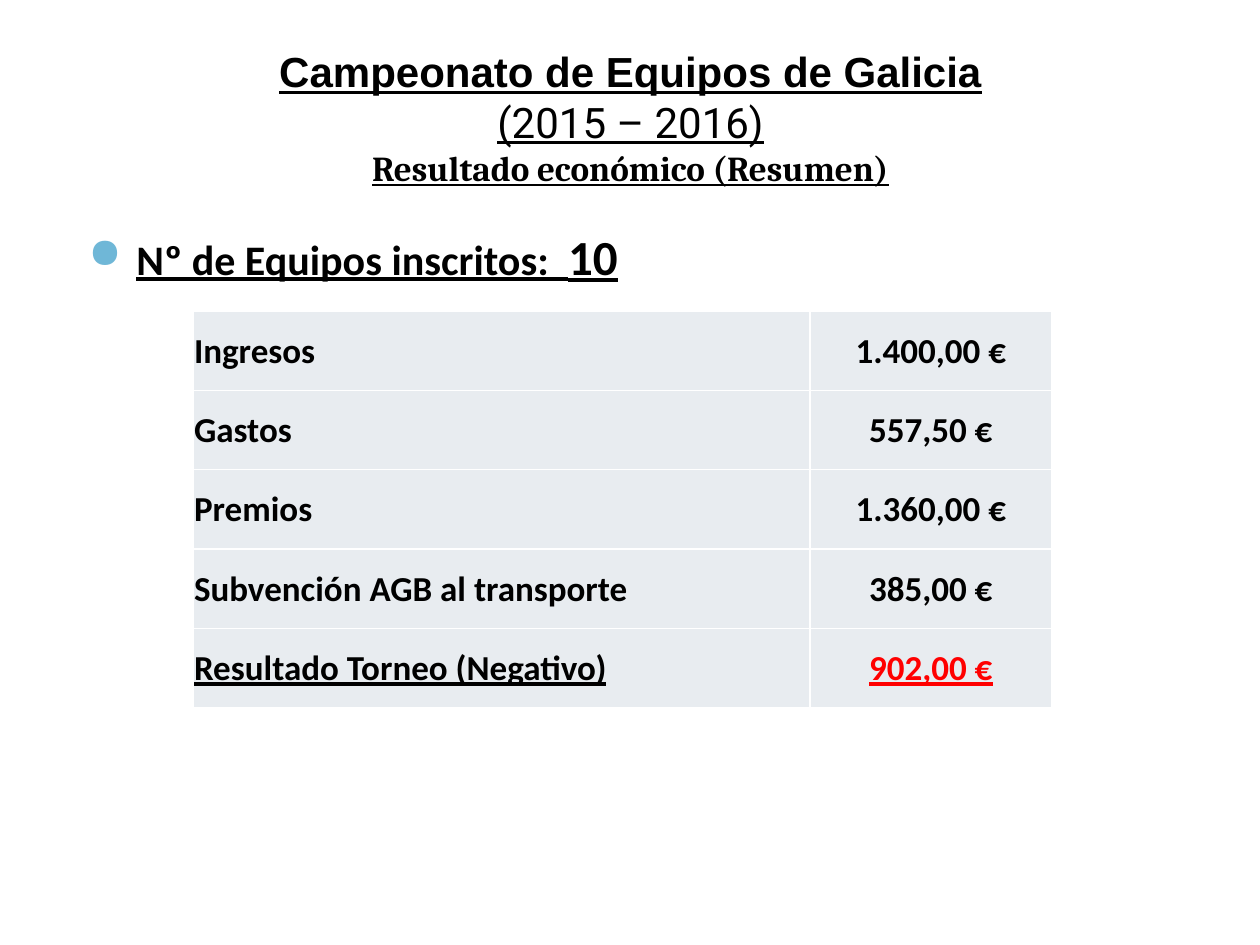
import copy
import dataclasses

import pptx
import pptx.dml.color
import pptx.enum.text
import pptx.oxml
import pptx.oxml.ns
import pptx.util

SCALE = 914400 / 126
ALIGN = pptx.enum.text.PP_ALIGN
ANCHOR = pptx.enum.text.MSO_ANCHOR


@dataclasses.dataclass
class Span:
    text: str
    size: int
    face: str = "Calibri"
    bold: bool = True
    line: bool = True
    tint: str = "000000"


@dataclasses.dataclass
class Entry:
    label: str
    value: str
    line: bool = False
    tint: str = "000000"


TITLE = [
    Span("Campeonato de Equipos de Galicia", 24, "Arial"),
    Span("(2015 – 2016)", 24, "Roboto", bold=False),
    Span("Resultado económico (Resumen)", 20, "Cambria"),
]
TEAMS = [Span("Nº de Equipos inscritos:  ", 24), Span("10", 28)]
ROWS = [
    Entry("Ingresos", "1.400,00 €"),
    Entry("Gastos", "557,50 €"),
    Entry("Premios", "1.360,00 €"),
    Entry("Subvención AGB al transporte", "385,00 €"),
    Entry("Resultado Torneo (Negativo)", "902,00 €", True, "FF0000"),
]


def px(count: int) -> int:
    return pptx.util.Emu(round(count * SCALE))


def color(code: str) -> pptx.dml.color.RGBColor:
    return pptx.dml.color.RGBColor.from_string(code)


def assign(item: object, values: dict) -> None:
    for name, value in values.items():
        setattr(item, name, value)


def place(shape: object, left: int, top: int, width: int, height: int) -> None:
    assign(shape, {"left": px(left), "top": px(top),
                   "width": px(width), "height": px(height)})


def write(para: object, spans: list[Span], split: bool = False) -> None:
    for index, span in enumerate(spans):
        run = para.add_run()
        run.text = span.text
        assign(run.font, {"name": span.face, "size": pptx.util.Pt(span.size),
                          "bold": span.bold, "underline": span.line})
        run.font.color.rgb = color(span.tint)
        if split and index < len(spans) - 1:
            para.add_line_break()
            para._p[-1].insert(0, copy.deepcopy(run._r.rPr))


def bullet(para: object, sign: str, tint: str, indent: int) -> None:
    props = para._p.get_or_add_pPr()
    props.set("marL", str(px(indent)))
    props.set("indent", str(-px(indent)))
    space = pptx.oxml.ns.nsdecls("a")
    for xml in (f'<a:buClr {space}><a:srgbClr val="{tint}"/></a:buClr>',
                f'<a:buChar {space} char="{sign}"/>'):
        props.append(pptx.oxml.parse_xml(xml))


def head(slide: object) -> None:
    title = slide.shapes.title
    place(title, 76, 40, 1109, 155)
    frame = title.text_frame
    assign(frame, {"word_wrap": True, "vertical_anchor": ANCHOR.BOTTOM,
                   "auto_size": pptx.enum.text.MSO_AUTO_SIZE.NONE})
    para = frame.paragraphs[0]
    assign(para, {"alignment": ALIGN.CENTER, "space_before": pptx.util.Pt(16)})
    write(para, TITLE, split=True)


def body(slide: object) -> None:
    box = slide.shapes.add_textbox(px(76), px(220), px(1109), px(598))
    box.text_frame.word_wrap = True
    para = box.text_frame.paragraphs[0]
    para.space_before = pptx.util.Pt(20)
    bullet(para, "●", "6FB7D7", 48)
    write(para, TEAMS)


def fill(cell: object, span: Span, align: object) -> None:
    assign(cell, {"vertical_anchor": ANCHOR.MIDDLE, "margin_left": px(1),
                  "margin_right": px(1), "margin_top": px(1), "margin_bottom": 0})
    cell.fill.solid()
    cell.fill.fore_color.rgb = color("E8ECF0")
    para = cell.text_frame.paragraphs[0]
    para.alignment = align
    write(para, [span])


def grid(slide: object) -> None:
    table = slide.shapes.add_table(
        len(ROWS), 2, px(193), px(311), px(859), px(397)).table
    assign(table, {"first_row": False, "horz_banding": False})
    for column, width in zip(table.columns, (617, 242)):
        column.width = px(width)
    for index, row in enumerate(ROWS):
        fill(table.cell(index, 0), Span(row.label, 20, line=row.line), ALIGN.LEFT)
        fill(table.cell(index, 1),
             Span(row.value, 20, line=row.line, tint=row.tint), ALIGN.CENTER)


def main() -> None:
    deck = pptx.Presentation()
    assign(deck, {"slide_width": px(1260), "slide_height": px(945)})
    slide = deck.slides.add_slide(deck.slide_layouts[5])
    head(slide)
    body(slide)
    grid(slide)
    deck.save("out.pptx")


if __name__ == "__main__":
    main()
